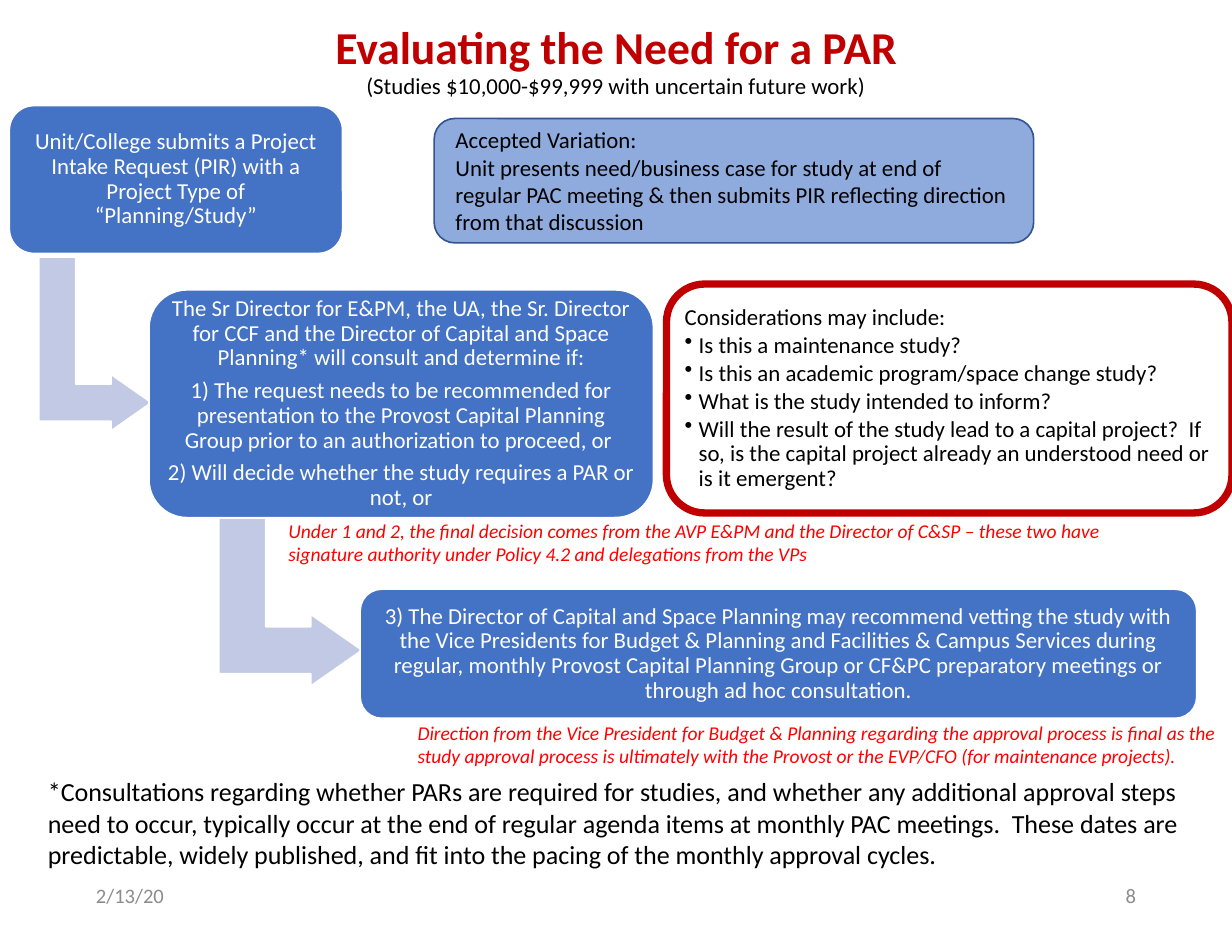
from dataclasses import dataclass

from lxml import etree
from pptx import Presentation
from pptx.dml.color import RGBColor
from pptx.enum import shapes, text
from pptx.oxml import ns
from pptx.util import Inches, Pt


@dataclass(frozen=True)
class Theme:
    font: str = "Calibri"
    red: str = "C00000"
    note_red: str = "FF0000"
    blue: str = "4472C4"
    light_blue: str = "8FAADC"
    dark_blue: str = "325491"
    arrow: str = "C1C9E4"
    white: str = "FFFFFF"
    black: str = "000000"
    gray: str = "8C8C8C"
    title_size: float = 28
    note_size: float = 12
    body_size: float = 14
    footnote_size: float = 16
    footer_size: float = 12.6


THEME = Theme()
LEFT, CENTER, RIGHT = text.PP_ALIGN.LEFT, text.PP_ALIGN.CENTER, text.PP_ALIGN.RIGHT


def style_font(font, size, color, bold=False, italic=False):
    font.name = THEME.font
    font.size = Pt(size)
    font.color.rgb = RGBColor.from_string(color)
    font.bold = bold
    font.italic = italic


def write_paragraphs(frame, lines, size, color, align=LEFT, spacing=1.0, after=0, italic=False):
    for index, line in enumerate(lines):
        paragraph = frame.paragraphs[0] if index == 0 else frame.add_paragraph()
        paragraph.text = line
        paragraph.alignment = align
        paragraph.line_spacing = spacing
        paragraph.space_after = Pt(after)
        style_font(paragraph.font, size, color, italic=italic)


def add_bullet(paragraph):
    properties = paragraph._p.get_or_add_pPr()
    properties.set("marL", str(Inches(0.12)))
    properties.set("indent", str(-Inches(0.12)))
    etree.SubElement(properties, ns.qn("a:buChar")).set("char", "•")


def add_preset(slide, kind, box, fill, line, line_width=1):
    shape = slide.shapes.add_shape(kind, *map(Inches, box))
    shape.shadow.inherit = False
    if fill:
        shape.fill.solid()
        shape.fill.fore_color.rgb = RGBColor.from_string(fill)
    else:
        shape.fill.background()
    shape.line.color.rgb = RGBColor.from_string(line)
    shape.line.width = Pt(line_width)
    return shape


def add_box(slide, box, lines, fill=THEME.blue, line=THEME.white, line_width=1,
            color=THEME.white, align=CENTER, spacing=0.9, after=5, side_margin=0.06):
    """Add a rounded box with vertically centred text."""
    shape = add_preset(slide, shapes.MSO_SHAPE.ROUNDED_RECTANGLE, box, fill, line, line_width)
    frame = shape.text_frame
    frame.word_wrap = True
    frame.vertical_anchor = text.MSO_ANCHOR.MIDDLE
    frame.margin_left = frame.margin_right = Inches(side_margin)
    frame.margin_top = frame.margin_bottom = Inches(0.06)
    write_paragraphs(frame, lines, THEME.body_size, color, align, spacing, after)
    return shape


def add_step_arrow(slide, box):
    """Add an arrow that runs down and then right; box is its frame before rotation."""
    arrow = add_preset(slide, shapes.MSO_SHAPE.BENT_UP_ARROW, box, THEME.arrow, THEME.white)
    arrow.rotation = 90
    for index, value in enumerate((0.328, 0.25, 0.358)):
        arrow.adjustments[index] = value


def add_text(slide, box, line, size, color, align=LEFT, italic=False, anchor=text.MSO_ANCHOR.TOP):
    frame = slide.shapes.add_textbox(*map(Inches, box)).text_frame
    frame.word_wrap = True
    frame.vertical_anchor = anchor
    write_paragraphs(frame, [line], size, color, align, italic=italic)


def set_title(slide, heading, subtitle):
    title = slide.shapes.title
    title.left, title.top, title.width, title.height = map(Inches, (0.72, 0.16, 9.06, 0.74))
    frame = title.text_frame
    frame.auto_size = text.MSO_AUTO_SIZE.NONE
    frame.vertical_anchor = text.MSO_ANCHOR.MIDDLE
    paragraph = frame.paragraphs[0]
    paragraph.alignment = CENTER
    paragraph.line_spacing = 0.9
    run = paragraph.add_run()
    run.text = heading
    style_font(run.font, THEME.title_size, THEME.red, bold=True)
    paragraph.add_line_break()
    run = paragraph.add_run()
    run.text = subtitle
    style_font(run.font, THEME.body_size, THEME.black)


def add_steps(slide):
    add_step_arrow(slide, (0.07, 2.45, 1.48, 0.96))
    add_step_arrow(slide, (1.76, 4.52, 1.43, 1.22))
    add_box(slide, (0.08, 0.9, 2.84, 1.26), [
        "Unit/College submits a Project Intake Request (PIR) with a Project Type of “Planning/Study”"])
    add_box(slide, (1.27, 2.47, 4.3, 1.94), [
        "The Sr Director for E&PM, the UA, the Sr. Director for CCF and the Director of Capital "
        "and Space Planning* will consult and determine if:",
        "1) The request needs to be recommended for presentation to the Provost Capital Planning "
        "Group prior to an authorization to proceed, or ",
        "2) Will decide whether the study requires a PAR or not, or"])
    add_box(slide, (3.07, 5.02, 7.13, 1.1), [
        "3) The Director of Capital and Space Planning may recommend vetting the study with the "
        "Vice Presidents for Budget & Planning and Facilities & Campus Services during regular, "
        "monthly Provost Capital Planning Group or CF&PC preparatory meetings or through ad hoc "
        "consultation."])


def add_side_boxes(slide):
    add_box(slide, (3.7, 1.01, 5.11, 1.06), [
        "Accepted Variation:",
        "Unit presents need/business case for study at end of regular PAC meeting & then submits "
        "PIR reflecting direction from that discussion"],
        fill=THEME.light_blue, line=THEME.dark_blue, color=THEME.black,
        align=LEFT, spacing=1.0, after=0, side_margin=0.13)
    considerations = add_box(slide, (5.68, 2.42, 4.82, 1.95), [
        "Considerations may include:",
        "Is this a maintenance study?",
        "Is this an academic program/space change study?",
        "What is the study intended to inform?",
        "Will the result of the study lead to a capital project?  If so, is the capital project "
        "already an understood need or is it emergent?"],
        fill=None, line=THEME.red, line_width=4.5, color=THEME.black, align=LEFT, after=2)
    for paragraph in considerations.text_frame.paragraphs[1:]:
        add_bullet(paragraph)


def add_notes_and_footer(slide):
    notes = (
        (2.36, 4.37, "Under 1 and 2, the final decision comes from the AVP E&PM and the Director of "
         "C&SP – these two have signature authority under Policy 4.2 and delegations from the VPs"),
        (3.46, 6.09, "Direction from the Vice President for Budget & Planning regarding the approval "
         "process is final as the study approval process is ultimately with the Provost or the "
         "EVP/CFO (for maintenance projects)."),
    )
    for left, top, note in notes:
        add_text(slide, (left, top, 7.19, 0.5), note, THEME.note_size, THEME.note_red, italic=True)
    add_text(slide, (0.31, 6.56, 9.94, 0.91),
             "*Consultations regarding whether PARs are required for studies, and whether any "
             "additional approval steps need to occur, typically occur at the end of regular agenda "
             "items at monthly PAC meetings.  These dates are predictable, widely published, and fit "
             "into the pacing of the monthly approval cycles.",
             THEME.footnote_size, THEME.black)
    for left, footer, align in ((0.72, "2/13/20", LEFT), (7.42, "8", RIGHT)):
        add_text(slide, (left, 7.41, 2.36, 0.43), footer, THEME.footer_size, THEME.gray, align,
                 anchor=text.MSO_ANCHOR.MIDDLE)


def main():
    presentation = Presentation()
    presentation.slide_width = Inches(10.5)
    presentation.slide_height = Inches(8)
    slide = presentation.slides.add_slide(presentation.slide_layouts.get_by_name("Title Only"))
    set_title(slide, "Evaluating the Need for a PAR",
              "(Studies $10,000-$99,999 with uncertain future work)")
    add_steps(slide)
    add_side_boxes(slide)
    add_notes_and_footer(slide)
    presentation.save("out.pptx")


if __name__ == "__main__":
    main()
